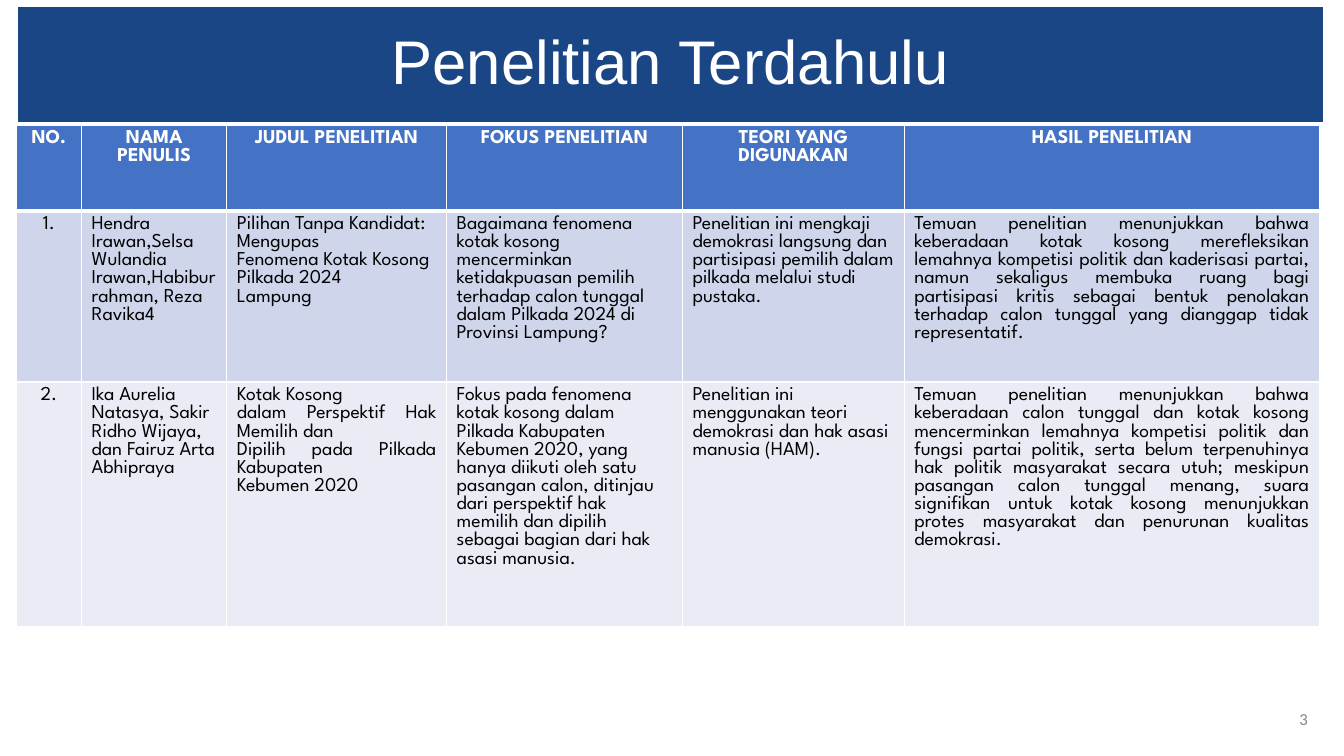
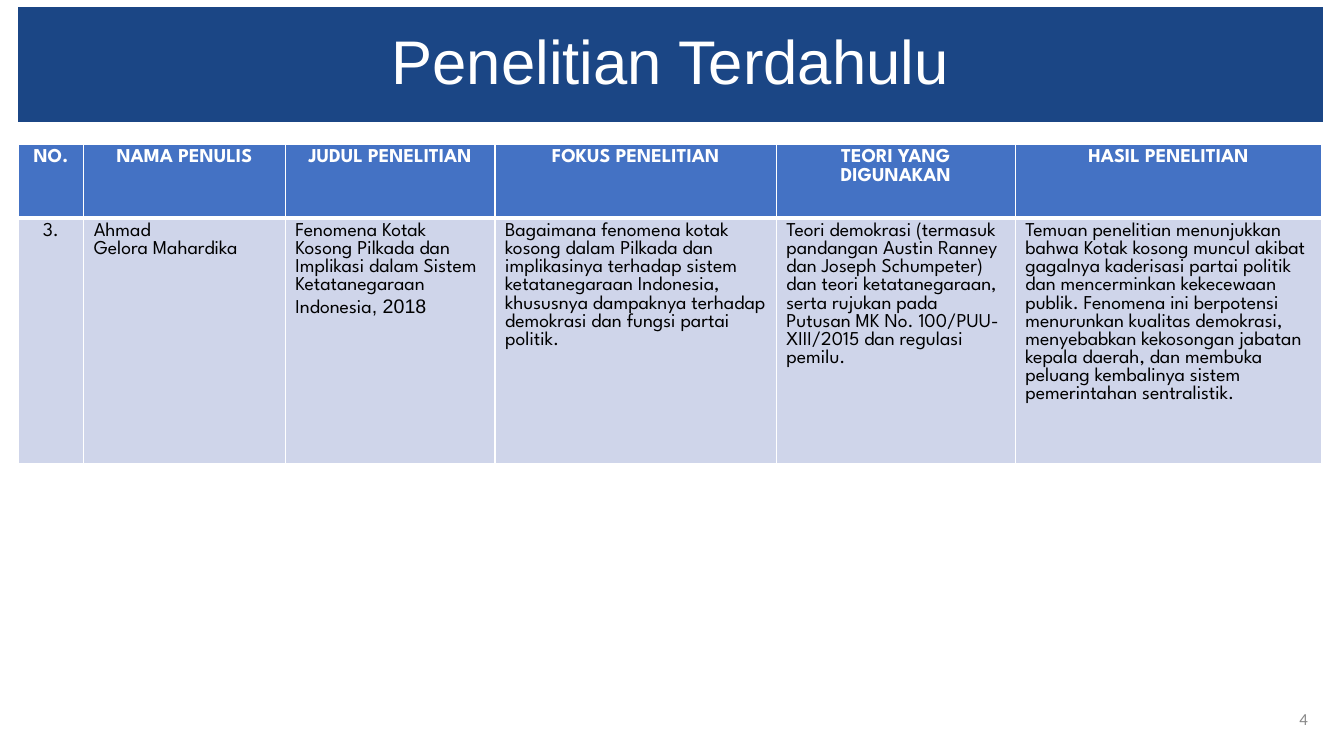
"""Build two slides of tables that sum up earlier research."""
from dataclasses import dataclass

from lxml.etree import SubElement
from pptx import Presentation
from pptx.dml.color import RGBColor
from pptx.enum.text import MSO_ANCHOR, MSO_AUTO_SIZE, PP_ALIGN
from pptx.oxml.ns import qn
from pptx.util import Pt

PX = 9144
TITLE_ONLY = 5


@dataclass(frozen=True)
class Theme:
    band: str = "1B4685"
    head: str = "4472C4"
    rows: tuple = ("CFD5EA", "E9EBF5")
    white: str = "FFFFFF"
    ink: str = "000000"
    grey: str = "888888"
    plain: str = "Arial"
    face: str = "League Spartan"
    foot: str = "Calibri"
    title: int = 44
    cell: int = 14
    number: int = 12
    thin: int = 1
    thick: int = 3


class Deck:
    def __init__(self, theme):
        self.theme = theme
        self.show = Presentation()
        self.show.slide_width = 1333 * PX
        self.show.slide_height = 750 * PX
        self.slide = None

    def page(self, title, number):
        layout = self.show.slide_layouts[TITLE_ONLY]
        self.slide = self.show.slides.add_slide(layout)
        self.title(title)
        self.number(number)

    def run(self, para, text, face, size, color, bold=False):
        run = para.add_run()
        run.text = text
        run.font.name = face
        run.font.size = Pt(size)
        run.font.bold = bold
        run.font.color.rgb = RGBColor.from_string(color)

    def fill(self, item, color):
        item.fill.solid()
        item.fill.fore_color.rgb = RGBColor.from_string(color)

    def place(self, shape, left, top, width, height):
        shape.left, shape.top = left * PX, top * PX
        shape.width, shape.height = width * PX, height * PX

    def line(self, shape, text, align, *style):
        frame = shape.text_frame
        frame.word_wrap = True
        frame.auto_size = MSO_AUTO_SIZE.NONE
        frame.vertical_anchor = MSO_ANCHOR.MIDDLE
        para = frame.paragraphs[0]
        para.alignment = align
        self.run(para, text, *style)
        return para

    def title(self, text):
        theme = self.theme
        shape = self.slide.shapes.title
        self.place(shape, 18, 7, 1294, 114)
        self.fill(shape, theme.band)
        para = self.line(shape, text, PP_ALIGN.CENTER,
                         theme.plain, theme.title, theme.white)
        para.line_spacing = 0.9

    def number(self, value):
        theme = self.theme
        box = self.slide.shapes.add_textbox(0, 0, PX, PX)
        self.place(box, 1250, 693, 57, 40)
        self.line(box, str(value), PP_ALIGN.RIGHT,
                  theme.foot, theme.number, theme.grey)

    def edges(self, cell, top, bottom):
        props = cell._tc.get_or_add_tcPr()
        sides = {"L": self.theme.thin, "R": self.theme.thin,
                 "T": top, "B": bottom}
        for spot, (side, width) in enumerate(sides.items()):
            edge = SubElement(props, qn(f"a:ln{side}"), w=str(Pt(width)))
            solid = SubElement(edge, qn("a:solidFill"))
            SubElement(solid, qn("a:srgbClr"), val=self.theme.white)
            props.insert(spot, edge)

    def cell(self, cell, text, align, color, bold):
        theme = self.theme
        frame = cell.text_frame
        for index, line in enumerate(text.split("\n")):
            para = frame.add_paragraph() if index else frame.paragraphs[0]
            para.alignment = align
            main, _, rest = line.partition("|")
            self.run(para, main, theme.face, theme.cell, color, bold)
            if rest:
                self.run(para, rest, theme.plain, theme.cell, color, bold)

    def table(self, left, top, widths, heights, rows, just=()):
        theme = self.theme
        grid = self.slide.shapes.add_table(
            len(rows), len(widths), left * PX, top * PX,
            sum(widths) * PX, sum(heights) * PX).table
        for col, width in zip(grid.columns, widths):
            col.width = width * PX
        for r, (row, height) in enumerate(zip(rows, heights)):
            grid.rows[r].height = height * PX
            head = r == 0
            back = theme.head if head else theme.rows[(r - 1) % 2]
            color = theme.white if head else theme.ink
            for c, text in enumerate(row):
                cell = grid.cell(r, c)
                align = PP_ALIGN.LEFT
                if head or c == 0:
                    align = PP_ALIGN.CENTER
                elif (r, c) in just:
                    align = PP_ALIGN.JUSTIFY
                self.cell(cell, text, align, color, head)
                self.fill(cell, back)
                self.edges(cell, theme.thick if r == 1 else theme.thin,
                           theme.thick if head else theme.thin)


TITLE = "Penelitian Terdahulu"
HEAD = ("NO.", "NAMA PENULIS", "JUDUL PENELITIAN", "FOKUS PENELITIAN",
        "TEORI YANG DIGUNAKAN", "HASIL PENELITIAN")
LAMPUNG = (
    "1.",
    "Hendra Irawan,Selsa Wulandia Irawan,Habiburrahman, Reza Ravika4",
    "Pilihan Tanpa Kandidat: Mengupas\n"
    "Fenomena Kotak Kosong Pilkada 2024\nLampung",
    "Bagaimana fenomena kotak kosong mencerminkan ketidakpuasan pemilih "
    "terhadap calon tunggal dalam Pilkada 2024 di Provinsi Lampung?",
    "Penelitian ini mengkaji demokrasi langsung dan partisipasi pemilih "
    "dalam pilkada melalui studi pustaka.",
    "Temuan penelitian menunjukkan bahwa keberadaan kotak kosong "
    "merefleksikan lemahnya kompetisi politik dan kaderisasi partai, namun "
    "sekaligus membuka ruang bagi partisipasi kritis sebagai bentuk "
    "penolakan terhadap calon tunggal yang dianggap tidak representatif.",
)
KEBUMEN = (
    "2.",
    "Ika Aurelia Natasya, Sakir Ridho Wijaya, dan Fairuz Arta\nAbhipraya",
    "Kotak Kosong\ndalam Perspektif Hak Memilih dan\n"
    "Dipilih pada Pilkada Kabupaten\nKebumen 2020",
    "Fokus pada fenomena kotak kosong dalam Pilkada Kabupaten Kebumen 2020, "
    "yang hanya diikuti oleh satu pasangan calon, ditinjau dari perspektif "
    "hak memilih dan dipilih sebagai bagian dari hak asasi manusia.",
    "Penelitian ini menggunakan teori demokrasi dan hak asasi manusia (HAM).",
    "Temuan penelitian menunjukkan bahwa keberadaan calon tunggal dan kotak "
    "kosong mencerminkan lemahnya kompetisi politik dan fungsi partai "
    "politik, serta belum terpenuhinya hak politik masyarakat secara utuh; "
    "meskipun pasangan calon tunggal menang, suara signifikan untuk kotak "
    "kosong menunjukkan protes masyarakat dan penurunan kualitas demokrasi.",
)
SYSTEM = (
    "3.",
    "Ahmad\nGelora Mahardika",
    "Fenomena Kotak Kosong Pilkada dan\n"
    "Implikasi dalam Sistem Ketatanegaraan\nIndonesia|, 2018",
    "Bagaimana fenomena kotak kosong dalam Pilkada dan implikasinya terhadap "
    "sistem ketatanegaraan Indonesia, khususnya dampaknya terhadap demokrasi "
    "dan fungsi partai politik.",
    "Teori demokrasi (termasuk pandangan Austin Ranney dan Joseph "
    "Schumpeter) dan teori ketatanegaraan, serta rujukan pada Putusan MK No. "
    "100/PUU-XIII/2015 dan regulasi pemilu.",
    "Temuan penelitian menunjukkan bahwa Kotak kosong muncul akibat gagalnya "
    "kaderisasi partai politik dan mencerminkan kekecewaan publik. Fenomena "
    "ini berpotensi menurunkan kualitas demokrasi, menyebabkan kekosongan "
    "jabatan kepala daerah, dan membuka peluang kembalinya sistem "
    "pemerintahan sentralistik.",
)


def main():
    deck = Deck(Theme())
    deck.page(TITLE, 3)
    deck.table(16, 124, (65, 144, 218, 234, 220, 412), (85, 170, 243),
               (HEAD, LAMPUNG, KEBUMEN), {(1, 5), (2, 2), (2, 5)})
    deck.page(TITLE, 4)
    deck.table(18, 143, (65, 200, 208, 279, 237, 304), (73, 244),
               (HEAD, SYSTEM))
    deck.show.save("out.pptx")


if __name__ == "__main__":
    main()
